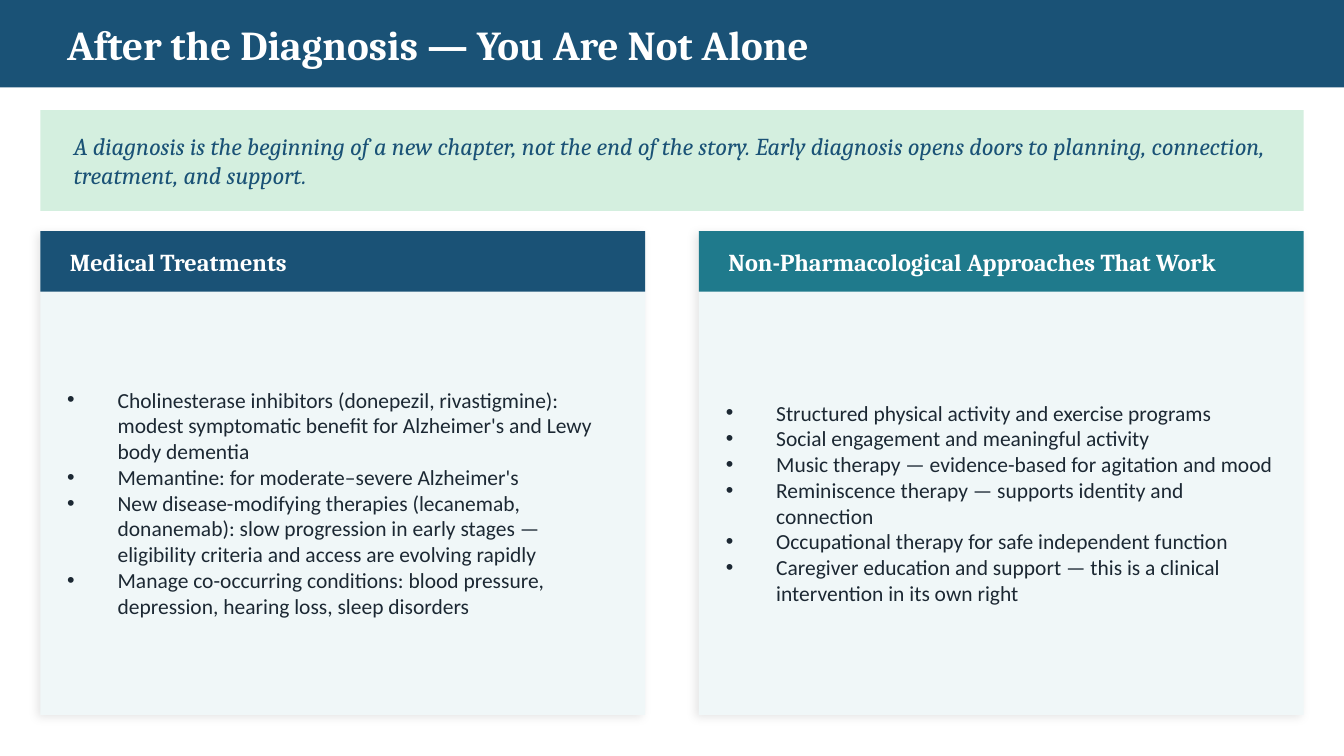
from lxml import etree
from pptx import Presentation
from pptx.dml.color import RGBColor
from pptx.enum.shapes import MSO_SHAPE
from pptx.enum.text import MSO_ANCHOR, MSO_AUTO_SIZE, PP_ALIGN
from pptx.oxml.ns import qn
from pptx.util import Pt

RECT = MSO_SHAPE.RECTANGLE
MIDDLE = MSO_ANCHOR.MIDDLE
NO_FIT = MSO_AUTO_SIZE.NONE
LEFT = PP_ALIGN.LEFT

NAVY = RGBColor(0x1A, 0x52, 0x76)
TEAL = RGBColor(0x1F, 0x7A, 0x8C)
MINT = RGBColor(0xD4, 0xEF, 0xDF)
PALE = RGBColor(0xF0, 0xF7, 0xF8)
INK = RGBColor(0x1C, 0x28, 0x33)
WHITE = RGBColor(0xFF, 0xFF, 0xFF)

PX = 4572  # 200 px to the inch
WIDE, HIGH = 2000, 1125
EDGE, CARD, TOP = 60, 900, 344
INDENT = 75

# Content
TITLE = "After the Diagnosis — You Are Not Alone"
QUOTE = ("A diagnosis is the beginning of a new chapter, not the end of the story. "
         "Early diagnosis opens doors to planning, connection, treatment, and support.")
CARDS = [
    ("Medical Treatments", NAVY, [
        "Cholinesterase inhibitors (donepezil, rivastigmine): modest symptomatic "
        "benefit for Alzheimer's and Lewy body dementia",
        "Memantine: for moderate–severe Alzheimer's",
        "New disease-modifying therapies (lecanemab, donanemab): slow progression "
        "in early stages — eligibility criteria and access are evolving rapidly",
        "Manage co-occurring conditions: blood pressure, depression, hearing loss, "
        "sleep disorders",
    ]),
    ("Non-Pharmacological Approaches That Work", TEAL, [
        "Structured physical activity and exercise programs",
        "Social engagement and meaningful activity",
        "Music therapy — evidence-based for agitation and mood",
        "Reminiscence therapy — supports identity and connection",
        "Occupational therapy for safe independent function",
        "Caregiver education and support — this is a clinical intervention in its "
        "own right",
    ]),
]

deck = Presentation()
deck.slide_width, deck.slide_height = WIDE * PX, HIGH * PX
slide = deck.slides.add_slide(deck.slide_layouts[4])  # Comparison
shapes = slide.shapes
holders = {h.placeholder_format.idx: h for h in slide.placeholders}


def add_rect(box, fill, shadow=False):
    rect = shapes.add_shape(RECT, *(n * PX for n in box))
    rect.shadow.inherit = False
    rect.fill.solid()
    rect.fill.fore_color.rgb = fill
    rect.line.fill.background()
    if shadow:
        effects = rect._element.spPr.find(qn("a:effectLst"))
        outer = etree.SubElement(effects, qn("a:outerShdw"), blurRad=str(Pt(5)),
                                 dist=str(Pt(2)), dir=str(135 * 60000),
                                 algn="bl", rotWithShape="0")
        color = etree.SubElement(outer, qn("a:srgbClr"), val="000000")
        etree.SubElement(color, qn("a:alpha"), val="10000")


def add_text(lines, box, holder=None, font="Cambria", size=13, color=WHITE,
             bold=False, italic=False, bullet=False):
    place = [n * PX for n in box]
    if holder is None:
        holder = shapes.add_textbox(*place)
    else:
        holder.left, holder.top, holder.width, holder.height = place
        shapes._spTree.append(holder._element)  # bring to the front
    frame = holder.text_frame
    frame.word_wrap = True
    frame.auto_size = NO_FIT
    frame.vertical_anchor = MIDDLE
    for i, line in enumerate(lines):
        para = frame.add_paragraph() if i else frame.paragraphs[0]
        if bullet:
            props = para._p.get_or_add_pPr()
            props.set("marL", str(INDENT * PX))
            props.set("indent", str(-INDENT * PX))
            etree.SubElement(props, qn("a:buChar"), char="•")
        para.alignment = LEFT
        para.space_before = Pt(0)
        run = para.add_run()
        run.text = line
        face = run.font
        face.name, face.size = font, Pt(size)
        face.bold, face.italic = bold, italic
        face.color.rgb = color


# Title band
add_rect((0, 0, WIDE, 130), NAVY)
add_text([TITLE], (80, 10, 1840, 110), holders[0], size=22, bold=True)

# Quote banner
add_rect((EDGE, 164, WIDE - 2 * EDGE, 150), MINT)
add_text([QUOTE], (90, 174, 1820, 130), color=NAVY, italic=True)

# Two cards, flush with the side margins
step = WIDE - 2 * EDGE - CARD
for i, (head, fill, points) in enumerate(CARDS):
    x = EDGE + i * step
    add_rect((x, TOP, CARD, 720), PALE, shadow=True)
    add_rect((x, TOP, CARD, 90), fill)
    add_text([head], (x + 24, TOP + 8, 860, 76), holders[1 + 2 * i], bold=True)
    add_text(points, (x + 20, TOP + 104, 864, 600), holders[2 + 2 * i],
             font="Calibri", size=11.5, color=INK, bullet=True)

deck.save("out.pptx")
